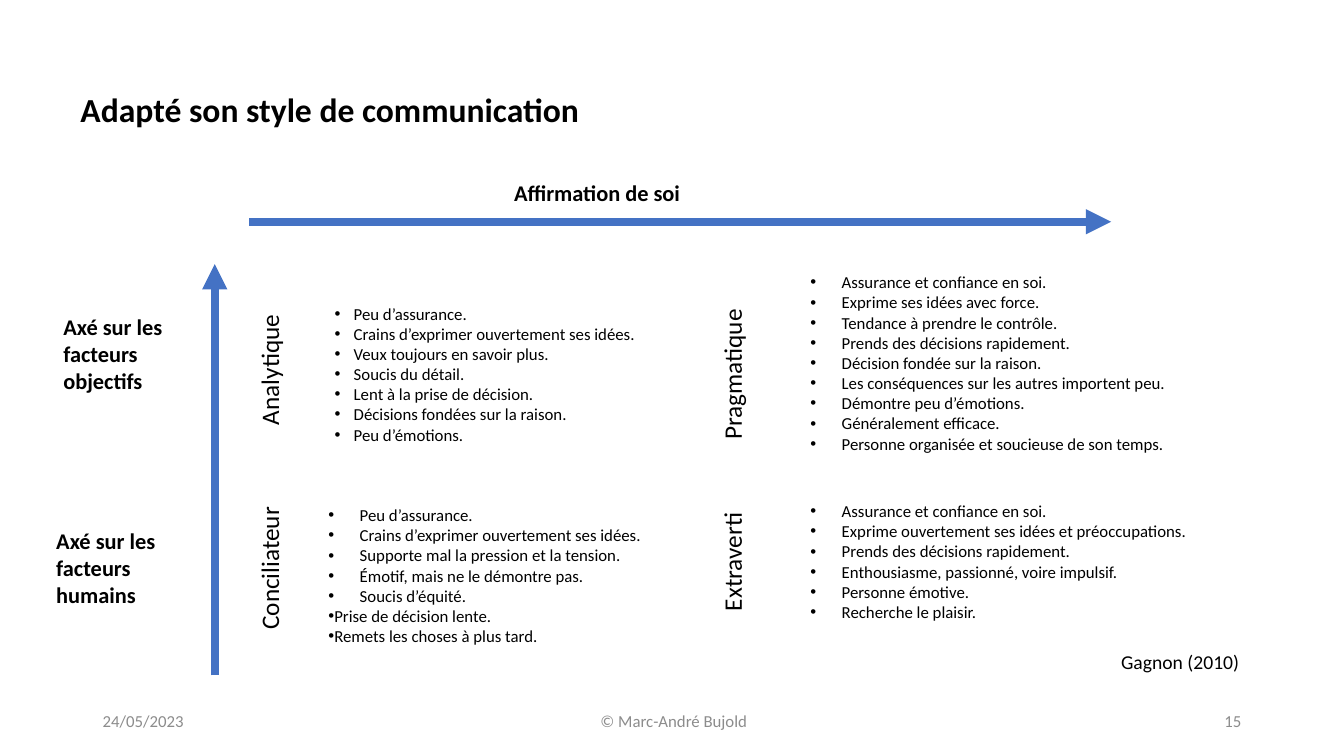
"""Build the slide on the four communication styles, set along two axes."""
from dataclasses import dataclass

from lxml.etree import SubElement
from pptx import Presentation
from pptx.dml.color import RGBColor
from pptx.enum.shapes import MSO_CONNECTOR as Connector
from pptx.enum.text import MSO_ANCHOR as Anchor, PP_ALIGN as Align
from pptx.oxml.ns import qn
from pptx.util import Inches, Pt


@dataclass(frozen=True)
class Theme:
    font: str = "Calibri"
    ink: str = "000000"
    muted: str = "8C8C8C"
    accent: str = "4472C4"
    title: int = 24
    style: int = 18
    axis: int = 16
    source: int = 14
    body: int = 12
    arrow: int = 6


THEME = Theme()
WIDTH, HEIGHT = 13.33, 7.5
MARGIN = 0.92
LINE = 0.2
PADDING = 0.1
STYLE_HEIGHT = 0.4
STYLE_CENTRES = (2.67, 7.26)
ROW_CENTRES = (3.65, 5.6)

TITLE = ("Adapté son style de communication", (0.7, 0.83, 5.2, 0.5))
SOURCE = ("Gagnon (2010)", (11.02, 6.4, 1.39, 0.34))
ASSERTION = ("Affirmation de soi", (5, 1.73, 1.88, 0.37))
FOCUS = [
    ("Axé sur les facteurs objectifs", (0.53, 3.06, 1.53, 0.91)),
    ("Axé sur les facteurs humains", (0.46, 5.18, 1.53, 0.91)),
]
ARROWS = [((2.47, 2.2), (11.02, 2.2)), ((2.13, 6.7), (2.13, 2.62))]
FOOTER = [
    ("24/05/2023", MARGIN, 3, Align.LEFT),
    (" © Marc-André Bujold", (WIDTH - 4.5) / 2, 4.5, Align.CENTER),
    ("15", WIDTH - MARGIN - 3, 3, Align.RIGHT),
]

STYLES = [
    dict(name="Analytique", column=0, row=0, length=1.31, shift=0.01,
         corner=(3.22, 2.96), width=3.2, indent=0.19, flush=0, traits=[
             "Peu d’assurance.",
             "Crains d’exprimer ouvertement ses idées.",
             "Veux toujours en savoir plus.",
             "Soucis du détail.",
             "Lent à la prise de décision.",
             "Décisions fondées sur la raison.",
             "Peu d’émotions."]),
    dict(name="Conciliateur", column=0, row=1, length=1.43, shift=0.03,
         corner=(3.16, 4.96), width=3.34, indent=0.31, flush=2, traits=[
             "Peu d’assurance.",
             "Crains d’exprimer ouvertement ses idées.",
             "Supporte mal la pression et la tension.",
             "Émotif, mais ne le démontre pas.",
             "Soucis d’équité.",
             "Prise de décision lente.",
             "Remets les choses à plus tard."]),
    dict(name="Pragmatique", column=1, row=0, length=1.64, shift=-0.01,
         corner=(7.94, 2.65), width=3.76, indent=0.31, flush=0, traits=[
             "Assurance et confiance en soi.",
             "Exprime ses idées avec force.",
             "Tendance à prendre le contrôle.",
             "Prends des décisions rapidement.",
             "Décision fondée sur la raison.",
             "Les conséquences sur les autres importent peu.",
             "Démontre peu d’émotions.",
             "Généralement efficace.",
             "Personne organisée et soucieuse de son temps."]),
    dict(name="Extraverti", column=1, row=1, length=1.18, shift=-0.03,
         corner=(7.94, 4.92), width=3.98, indent=0.31, flush=0, traits=[
             "Assurance et confiance en soi.",
             "Exprime ouvertement ses idées et préoccupations.",
             "Prends des décisions rapidement.",
             "Enthousiasme, passionné, voire impulsif.",
             "Personne émotive.",
             "Recherche le plaisir."]),
]


def add_text(slide, text, area, size, bold=False, colour=THEME.ink,
             align=Align.LEFT, wrap=False, anchor=Anchor.TOP):
    box = slide.shapes.add_textbox(*map(Inches, area))
    frame = box.text_frame
    frame.text = text
    frame.word_wrap = wrap
    frame.vertical_anchor = anchor
    for paragraph in frame.paragraphs:
        paragraph.alignment = align
        for run in paragraph.runs:
            run.font.name = THEME.font
            run.font.size = Pt(size)
            run.font.bold = bold
            run.font.color.rgb = RGBColor.from_string(colour)
    return box


def add_arrow(slide, start, end):
    arrow = slide.shapes.add_connector(
        Connector.STRAIGHT, *map(Inches, start + end))
    arrow.line.color.rgb = RGBColor.from_string(THEME.accent)
    arrow.line.width = Pt(THEME.arrow)
    SubElement(arrow.line._get_or_add_ln(), qn("a:tailEnd"), type="triangle")
    SubElement(arrow._element.spPr, qn("a:effectLst"))


def add_style_name(slide, style):
    length = style["length"]
    left = STYLE_CENTRES[style["column"]] - length / 2
    top = ROW_CENTRES[style["row"]] + style["shift"] - STYLE_HEIGHT / 2
    name = add_text(slide, style["name"], (left, top, length, STYLE_HEIGHT),
                    THEME.style)
    name.rotation = 270
    if style["name"] == "Pragmatique":
        name.text_frame.word_wrap = True


def add_traits(slide, style):
    traits, indent = style["traits"], style["indent"]
    height = len(traits) * LINE + PADDING
    area = (*style["corner"], style["width"], height)
    box = add_text(slide, "\n".join(traits), area, THEME.body)
    first_flush = len(traits) - style["flush"]
    for index, paragraph in enumerate(box.text_frame.paragraphs):
        properties = paragraph._p.get_or_add_pPr()
        margin = indent if index < first_flush else 0
        properties.set("marL", str(Inches(margin)))
        properties.set("indent", str(-Inches(indent)))
        SubElement(properties, qn("a:buFont"), typeface="Arial")
        SubElement(properties, qn("a:buChar"), char="•")


def main():
    deck = Presentation()
    deck.slide_width, deck.slide_height = Inches(WIDTH), Inches(HEIGHT)
    slide = deck.slides.add_slide(deck.slide_layouts[6])

    for text, left, width, align in FOOTER:
        add_text(slide, text, (left, 6.95, width, 0.4), THEME.body,
                 colour=THEME.muted, align=align, wrap=True,
                 anchor=Anchor.MIDDLE)
    add_text(slide, *TITLE, THEME.title, bold=True)
    add_text(slide, *SOURCE, THEME.source)
    for start, end in ARROWS:
        add_arrow(slide, start, end)
    add_text(slide, *ASSERTION, THEME.axis, bold=True)
    for text, area in FOCUS:
        add_text(slide, text, area, THEME.axis, bold=True, wrap=True)
    for style in STYLES:
        add_style_name(slide, style)
        add_traits(slide, style)

    deck.save("out.pptx")


if __name__ == "__main__":
    main()
